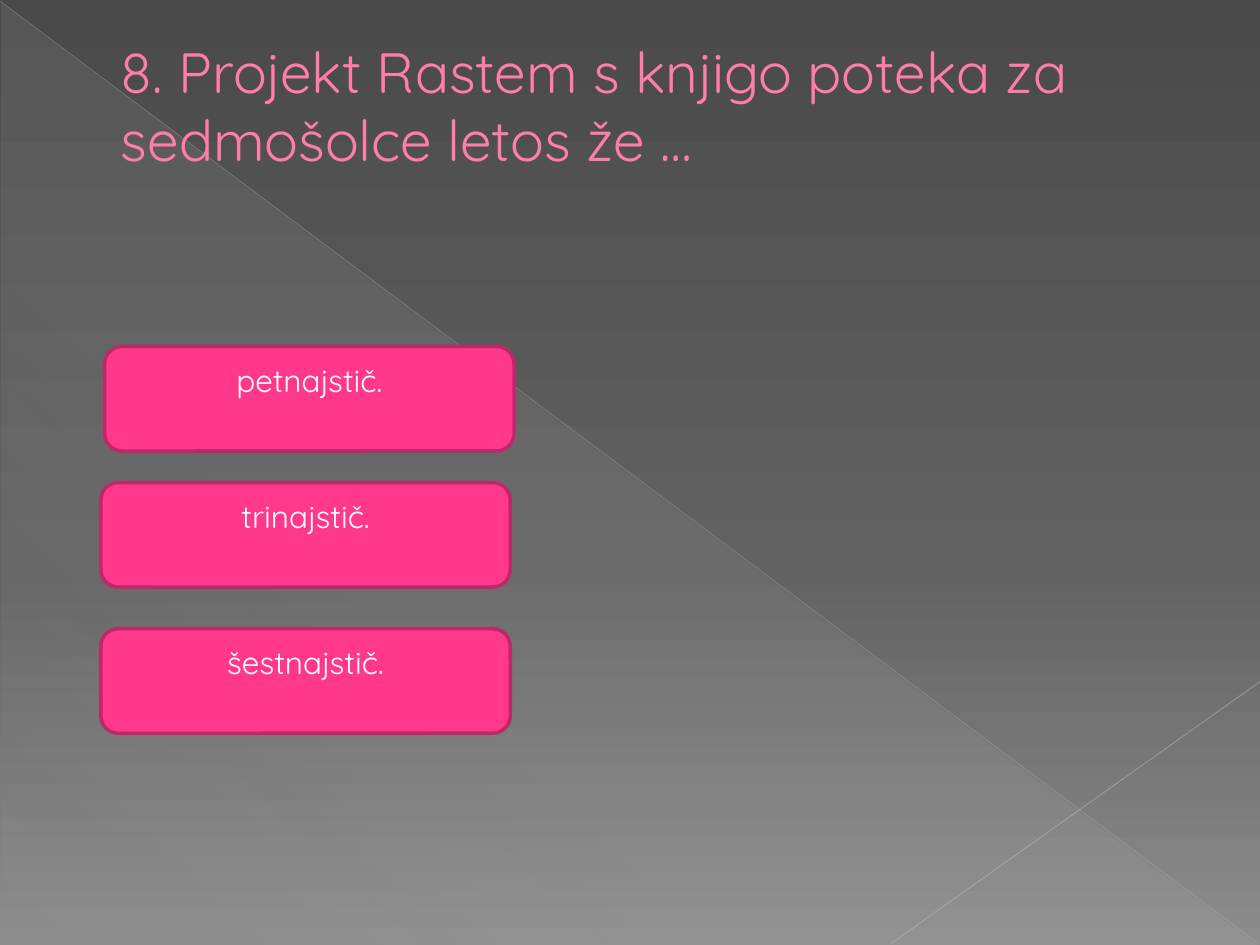
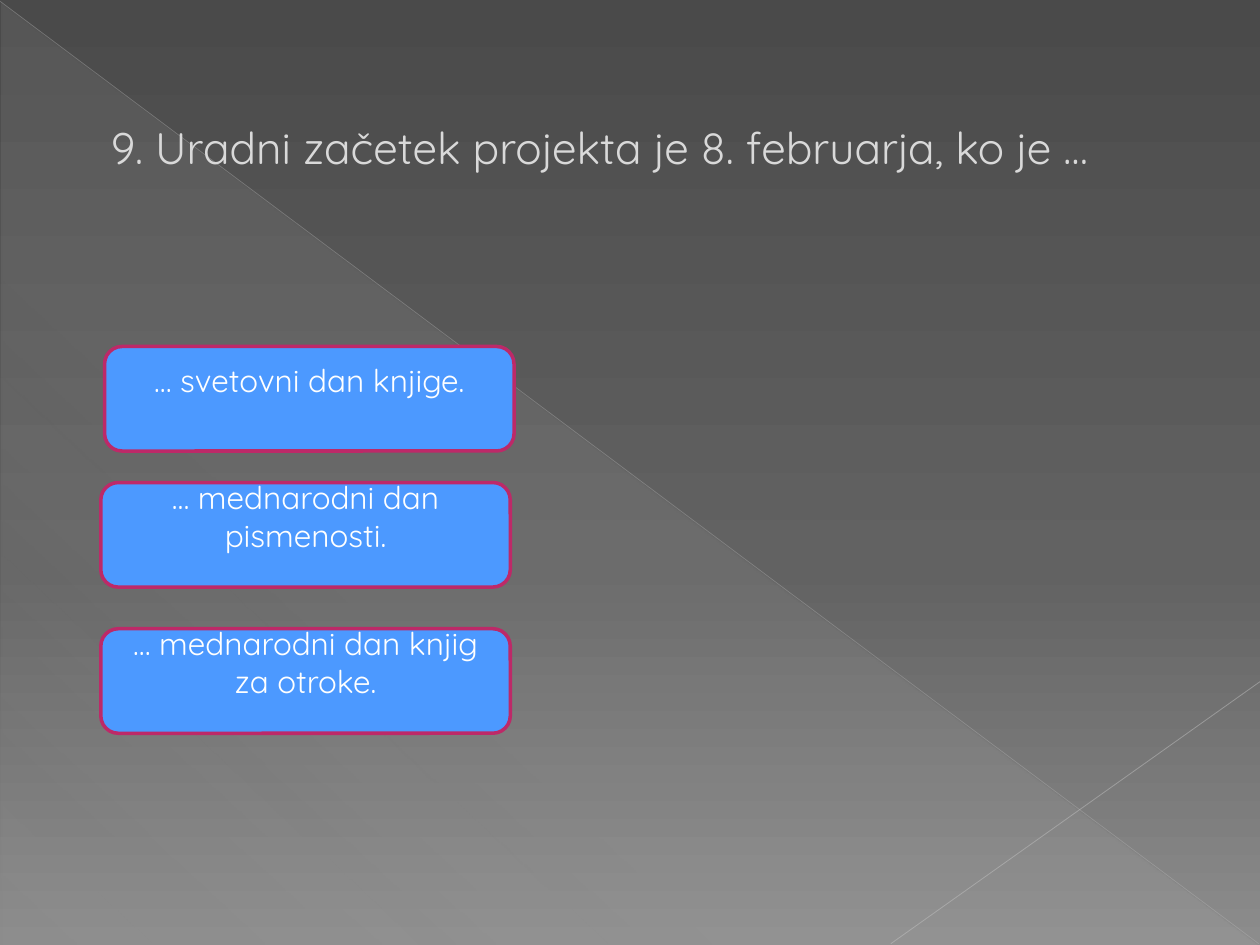
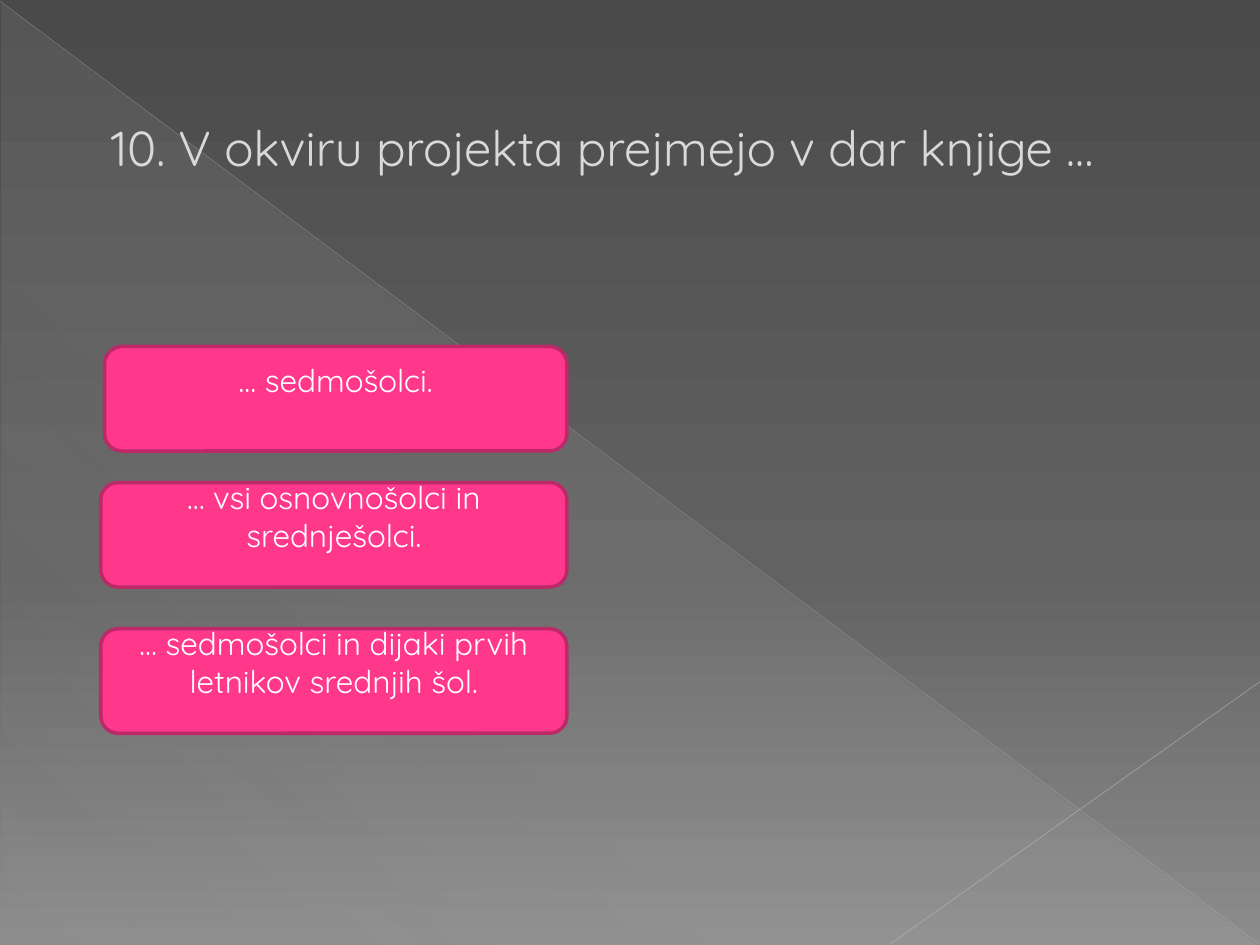
from dataclasses import dataclass

from lxml.etree import SubElement
from pptx import Presentation
from pptx.dml.color import RGBColor
from pptx.enum.shapes import MSO_CONNECTOR, MSO_SHAPE
from pptx.enum.text import MSO_ANCHOR, MSO_AUTO_SIZE, PP_ALIGN
from pptx.oxml.ns import qn
from pptx.util import Inches, Pt

FONT = "Quicksand"
COLORS = {
    "pink": "FF388C",
    "blue": "4C99FF",
    "border": "BD2968",
    "title_pink": "FF7DA7",
    "title_gray": "D9D9D9",
    "title_outline": "B12761",
    "white": "FFFFFF",
    "background_top": "4A4A4A",
    "background_middle": "626262",
    "background_bottom": "8C8C8C",
    "triangle": "D2D2D2",
    "diagonal": "BFBFBF",
    "corner": "C6C6C6",
}
TITLE_HEIGHT = ANSWER_HEIGHT = 0.83
ANSWER_PLACES = [(0.83, 2.75), (0.8, 3.83), (0.8, 4.99)]


@dataclass
class Question:
    title: str
    title_box: tuple  # left, top, width
    title_size: float
    title_color: str
    answers: list
    answer_widths: tuple = (3.25, 3.25, 3.25)
    answer_color: str = "pink"


QUESTIONS = [
    Question(
        "8. Projekt Rastem s knjigo poteka za sedmošolce letos že …",
        (0.33, 0.42, 9.33), 32.4, "title_pink",
        ["petnajstič.", "trinajstič.", "šestnajstič."],
    ),
    Question(
        "9. Uradni začetek projekta je 8. februarja, ko je …",
        (0.25, 0.75, 9.5), 25.2, "title_gray",
        ["… svetovni dan knjige.", "… mednarodni dan pismenosti.",
         "… mednarodni dan knjig za otroke."],
        answer_color="blue",
    ),
    Question(
        "10. V okviru projekta prejmejo v dar knjige …",
        (0.25, 0.75, 9.33), 28, "title_gray",
        ["… sedmošolci.", "… vsi osnovnošolci in srednješolci.",
         "… sedmošolci in dijaki prvih letnikov srednjih šol."],
        answer_widths=(3.67, 3.7, 3.7),
    ),
]


def rgb(name):
    return RGBColor.from_string(COLORS[name])


def set_alpha(color_element, percent):
    SubElement(color_element, qn("a:alpha"), val=str(percent * 1000))


def set_gradient(fill, owner, stops, angle):
    """Give fill, found inside owner, stops of (position, colour, opacity)."""
    fill.gradient()
    gradient = owner.find(".//" + qn("a:gradFill"))
    for child in list(gradient):
        gradient.remove(child)
    stop_list = SubElement(gradient, qn("a:gsLst"))
    for position, name, opacity in stops:
        stop = SubElement(stop_list, qn("a:gs"), pos=str(position * 1000))
        color = SubElement(stop, qn("a:srgbClr"), val=COLORS[name])
        if opacity < 100:
            set_alpha(color, opacity)
    SubElement(gradient, qn("a:lin"), ang=str(angle * 60000), scaled="0")


def add_line(shapes, start, end, color, width, opacity):
    points = [Inches(value) for value in (*start, *end)]
    connector = shapes.add_connector(MSO_CONNECTOR.STRAIGHT, *points)
    connector.line.color.rgb = rgb(color)
    connector.line.width = Pt(width)
    properties = connector.element.spPr
    set_alpha(properties.find(".//" + qn("a:srgbClr")), opacity)
    SubElement(properties, qn("a:effectLst"))
    return connector


def add_triangle(shapes):
    triangle = shapes.add_shape(
        MSO_SHAPE.RIGHT_TRIANGLE,
        Inches(0.01), Inches(0.02), Inches(9.98), Inches(7.48))
    triangle.shadow.inherit = False
    triangle.line.fill.background()
    stops = [(0, "triangle", 10), (70, "triangle", 8), (100, "triangle", 1)]
    set_gradient(triangle.fill, triangle.element, stops, 133)
    return triangle


def style_master(master, shapes):
    """Set the background and move the decoration, drawn in shapes, to the master."""
    stops = [(0, "background_top", 100), (60, "background_middle", 100),
             (100, "background_bottom", 100)]
    set_gradient(master.background.fill, master.element, stops, 90)
    decoration = [
        add_triangle(shapes),
        add_line(shapes, (0, 0.01), (9.99, 7.49), "diagonal", 0.39, 35),
        add_line(shapes, (10, 5.41), (7.07, 7.49), "corner", 0.47, 45),
    ]
    for index, shape in enumerate(decoration, start=2):
        master.shapes.element.insert(index, shape.element)


def format_text(paragraph, size, color, alignment):
    paragraph.alignment = alignment
    for run in paragraph.runs:
        run.font.name = FONT
        run.font.size = Pt(size)
        run.font.color.rgb = rgb(color)


def outline_text(run, color, width):
    properties = run.font._element if hasattr(run.font, "_element") else run._r.get_or_add_rPr()
    line = SubElement(properties, qn("a:ln"), w=str(Pt(width)))
    fill = SubElement(line, qn("a:solidFill"))
    SubElement(fill, qn("a:srgbClr"), val=COLORS[color])
    properties.insert(0, line)


def set_title(slide, question):
    title = slide.shapes.title
    left, top, width = question.title_box
    title.left, title.top = Inches(left), Inches(top)
    title.width, title.height = Inches(width), Inches(TITLE_HEIGHT)
    frame = title.text_frame
    frame.text = question.title
    frame.word_wrap = True
    frame.auto_size = MSO_AUTO_SIZE.NONE
    frame.vertical_anchor = MSO_ANCHOR.MIDDLE
    paragraph = frame.paragraphs[0]
    format_text(paragraph, question.title_size, question.title_color, PP_ALIGN.LEFT)
    properties = paragraph._p.get_or_add_pPr()
    properties.set("marL", str(Inches(0.53)))
    properties.set("indent", "0")
    outline_text(paragraph.runs[0], "title_outline", 0.5)


def add_answer(slide, text, place, width, color):
    left, top = place
    answer = slide.shapes.add_shape(
        MSO_SHAPE.ROUNDED_RECTANGLE,
        Inches(left), Inches(top), Inches(width), Inches(ANSWER_HEIGHT))
    answer.shadow.inherit = False
    answer.fill.solid()
    answer.fill.fore_color.rgb = rgb(color)
    answer.line.color.rgb = rgb("border")
    answer.line.width = Pt(2)
    frame = answer.text_frame
    frame.text = text
    frame.word_wrap = True
    frame.vertical_anchor = MSO_ANCHOR.MIDDLE
    frame.margin_top, frame.margin_bottom = 0, Inches(0.3)
    format_text(frame.paragraphs[0], 18, "white", PP_ALIGN.CENTER)


def add_question(presentation, question):
    slide = presentation.slides.add_slide(presentation.slide_layouts[5])
    set_title(slide, question)
    for text, place, width in zip(question.answers, ANSWER_PLACES, question.answer_widths):
        add_answer(slide, text, place, width, question.answer_color)


def main():
    presentation = Presentation()
    presentation.slide_width = Inches(10)
    presentation.slide_height = Inches(7.5)
    for question in QUESTIONS:
        add_question(presentation, question)
    style_master(presentation.slide_master, presentation.slides[0].shapes)
    presentation.save("out.pptx")


if __name__ == "__main__":
    main()
